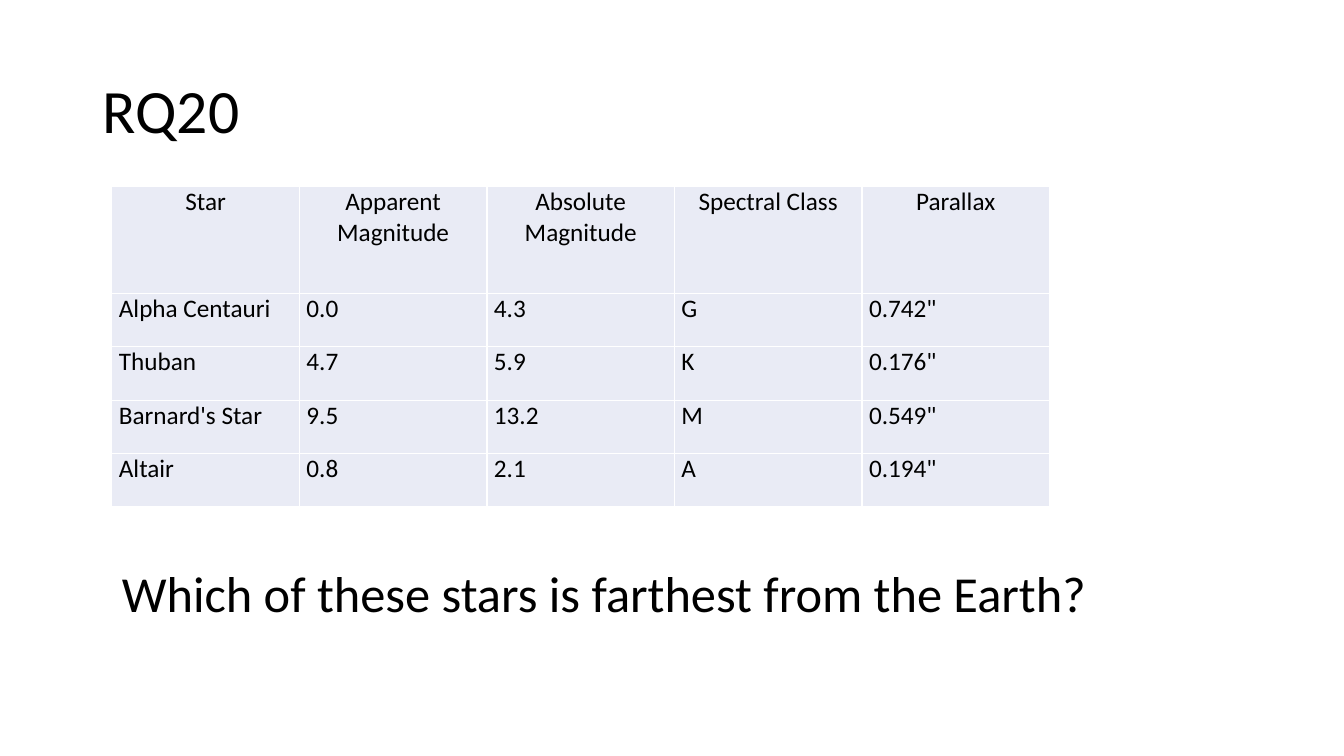
"""Build a review-question slide with a table of star data."""
from lxml import etree
from pptx import Presentation
from pptx.dml.color import RGBColor
from pptx.enum.text import MSO_ANCHOR, PP_ALIGN
from pptx.oxml.ns import qn
from pptx.util import Inches, Pt

MIDDLE, TOP = MSO_ANCHOR.MIDDLE, MSO_ANCHOR.TOP
CENTER, LEFT = PP_ALIGN.CENTER, PP_ALIGN.LEFT
COLORS = {"text": "000000", "cell": "E9EBF5", "border": "FFFFFF"}
STARS = [
    ("Star", "Apparent Magnitude", "Absolute Magnitude", "Spectral Class", "Parallax"),
    ("Alpha Centauri", "0.0", "4.3", "G", '0.742"'),
    ("Thuban", "4.7", "5.9", "K", '0.176"'),
    ("Barnard's Star", "9.5", "13.2", "M", '0.549"'),
    ("Altair", "0.8", "2.1", "A", '0.194"'),
]
COLUMN_WIDTH, HEADER_HEIGHT, ROW_HEIGHT = 1.86, 1.06, 0.53


def write(frame, text, size, align=LEFT):
    frame.text = text
    paragraph = frame.paragraphs[0]
    paragraph.alignment = align
    font = paragraph.runs[0].font
    font.name = "Calibri"
    font.size = Pt(size)
    font.color.rgb = RGBColor.from_string(COLORS["text"])


def add_borders(cell):
    properties = cell._tc.get_or_add_tcPr()
    for side in ("lnL", "lnR", "lnT", "lnB"):
        line = etree.SubElement(properties, qn(f"a:{side}"), w=str(Pt(1)))
        fill = etree.SubElement(line, qn("a:solidFill"))
        etree.SubElement(fill, qn("a:srgbClr"), val=COLORS["border"])


prs = Presentation()
prs.slide_width, prs.slide_height = Inches(13.33), Inches(7.5)
slide = prs.slides.add_slide(prs.slide_layouts[6])

title = slide.shapes.add_textbox(Inches(0.92), Inches(0.4), Inches(11.5), Inches(1.45)).text_frame
title.word_wrap = True
title.vertical_anchor = MIDDLE
write(title, "RQ20", 44)
title.paragraphs[0].line_spacing = 0.9

star_table = slide.shapes.add_table(
    len(STARS), len(STARS[0]), Inches(1.11), Inches(1.85),
    Inches(COLUMN_WIDTH * len(STARS[0])),
    Inches(HEADER_HEIGHT + ROW_HEIGHT * (len(STARS) - 1)),
).table
star_table.first_row = False
star_table.horz_banding = False
for column in star_table.columns:
    column.width = Inches(COLUMN_WIDTH)
for row_index, values in enumerate(STARS):
    is_header = row_index == 0
    star_table.rows[row_index].height = Inches(HEADER_HEIGHT if is_header else ROW_HEIGHT)
    for column_index, value in enumerate(values):
        cell = star_table.cell(row_index, column_index)
        cell.margin_left = cell.margin_right = Inches(0.07)
        cell.margin_top = cell.margin_bottom = Inches(0)
        cell.vertical_anchor = TOP
        add_borders(cell)
        cell.fill.solid()
        cell.fill.fore_color.rgb = RGBColor.from_string(COLORS["cell"])
        write(cell.text_frame, value, 18, CENTER if is_header else LEFT)

question = slide.shapes.add_textbox(Inches(1.11), Inches(5.53), Inches(10.04), Inches(0.71)).text_frame
question.word_wrap = True
write(question, "Which of these stars is farthest from the Earth?", 36)

prs.save("out.pptx")
